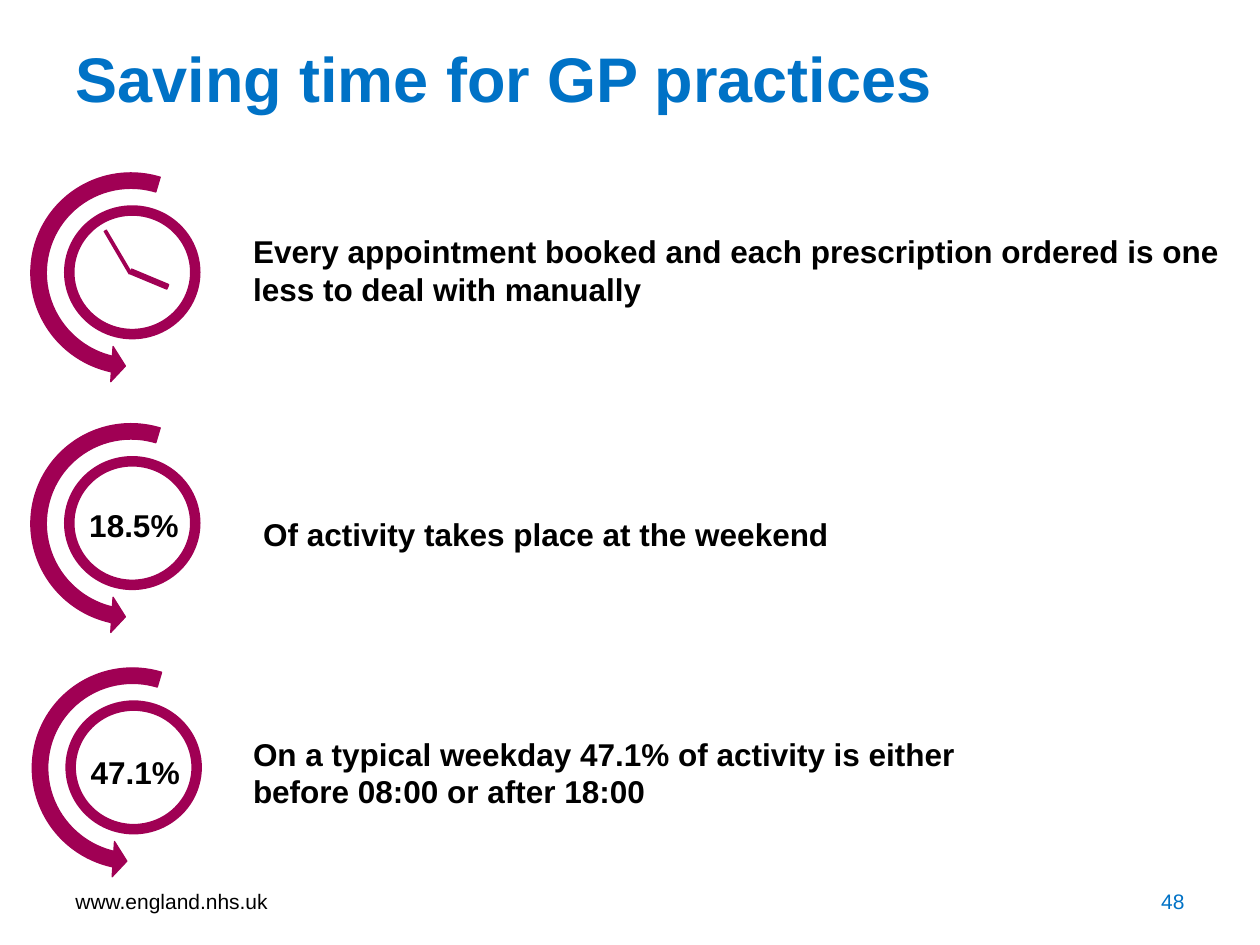
"""Build the slide on saving time for GP practices."""
import pptx
import pptx.dml.color
import pptx.enum.shapes
import pptx.enum.text
import pptx.util

Pt = pptx.util.Pt
SHAPE = pptx.enum.shapes.MSO_SHAPE
ALIGN = pptx.enum.text.PP_ALIGN
ANCHOR = pptx.enum.text.MSO_ANCHOR


def color(hex_code):
    return pptx.dml.color.RGBColor.from_string(hex_code)


class SlideBuilder:
    font = "Arial"
    blue, plum, black, white = "0072C6", "A00054", "000000", "FFFFFF"
    arrow_adjustments = (0.07, 8.43 * 0.6, 204.95 * 0.6, 20.63 * 0.6, 0.08)

    def __init__(self, slide):
        self.slide = slide

    def set_text(self, box, text, size, hex_code, bold, align, anchor):
        frame = box.text_frame
        frame.word_wrap = True
        frame.auto_size = pptx.enum.text.MSO_AUTO_SIZE.NONE
        frame.vertical_anchor = anchor
        paragraph = frame.paragraphs[0]
        paragraph.text = text
        paragraph.alignment = align
        paragraph.font.name = self.font
        paragraph.font.size = Pt(size)
        paragraph.font.bold = bold
        paragraph.font.color.rgb = color(hex_code)

    def title(self, text, left, top, width, height):
        heading = self.slide.shapes.title
        heading.left, heading.top = Pt(left), Pt(top)
        heading.width, heading.height = Pt(width), Pt(height)
        self.set_text(heading, text, 36, self.blue, True, ALIGN.LEFT, ANCHOR.MIDDLE)

    def statement(self, text, left, top, width, height, parent=None):
        shapes = (parent or self.slide).shapes
        box = shapes.add_textbox(Pt(left), Pt(top), Pt(width), Pt(height))
        self.set_text(box, text, 18, self.black, True, ALIGN.LEFT, ANCHOR.TOP)

    def footer(self, text, left, hex_code, align):
        box = self.slide.shapes.add_textbox(Pt(left), Pt(500.4), Pt(168), Pt(28.8))
        self.set_text(box, text, 12, hex_code, False, align, ANCHOR.MIDDLE)

    def shape(self, parent, preset, left, top, width, height, fill, line=0, rotation=0):
        item = parent.shapes.add_shape(preset, Pt(left), Pt(top), Pt(width), Pt(height))
        item.shadow.inherit = False
        item.rotation = rotation
        item.fill.solid()
        item.fill.fore_color.rgb = color(fill)
        if line:
            item.line.color.rgb = color(self.plum)
            item.line.width = Pt(line)
        else:
            item.line.fill.background()
        return item

    def dial(self, left, top):
        group = self.slide.shapes.add_group_shape()
        arrow = self.shape(group, SHAPE.CIRCULAR_ARROW, left, top, 126, 126.7,
                           self.plum, 0.75, 307.2)
        for index, value in enumerate(self.arrow_adjustments):
            arrow.adjustments[index] = value
        arrow.element.spPr.xfrm.set("flipV", "1")
        self.shape(group, SHAPE.FLOWCHART_CONNECTOR, left + 27.4, top + 27.4,
                   72, 70.6, self.white, 6)
        return group

    def hand(self, dial, left, top, width, height, rotation):
        self.shape(dial, SHAPE.ROUNDED_RECTANGLE, left, top, width, height,
                   self.plum, rotation=rotation)


def main():
    deck = pptx.Presentation()
    deck.slide_width, deck.slide_height = Pt(720), Pt(540)
    builder = SlideBuilder(deck.slides.add_slide(deck.slide_layouts[5]))

    builder.title("Saving time for GP practices", 36, 18, 579.6, 52.6)
    builder.footer("www.england.nhs.uk", 36, builder.black, ALIGN.LEFT)
    builder.footer("48", 516, builder.blue, ALIGN.RIGHT)

    clock = builder.dial(12.2, 92.9)
    builder.hand(clock, 66.2, 129.6, 2.2, 28.8, 329.6)
    builder.hand(clock, 73.4, 157.7, 23.8, 3.6, 22.7)
    for share, left, top, drop in (("18.5%", 12.2, 236.2, 49.7),
                                   ("47.1%", 13, 375.8, 51.1)):
        dial = builder.dial(left, top)
        builder.statement(share, left + 31.7, top + drop, 65.5, 28.8, dial)

    for text, left, top, width, height in (
        ("Every appointment booked and each prescription ordered is one "
         "less to deal with manually", 137.5, 128.9, 582.5, 51.1),
        ("Of activity takes place at the weekend", 143.3, 290.9, 565.2, 28.8),
        ("On a typical weekday 47.1% of activity is either "
         "before 08:00 or after 18:00", 137.5, 416.2, 460.1, 51.1),
    ):
        builder.statement(text, left, top, width, height)

    deck.save("out.pptx")


if __name__ == "__main__":
    main()
